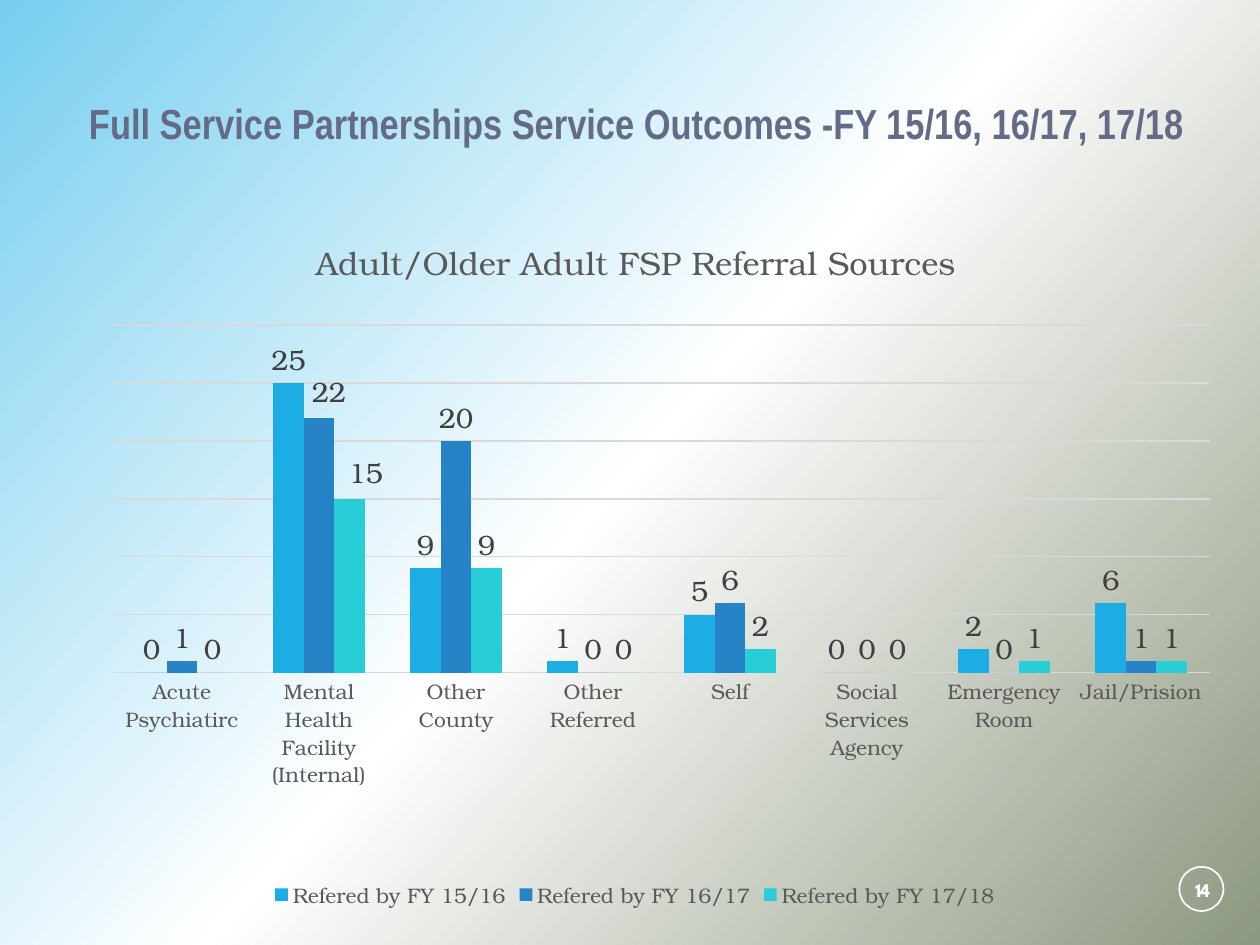
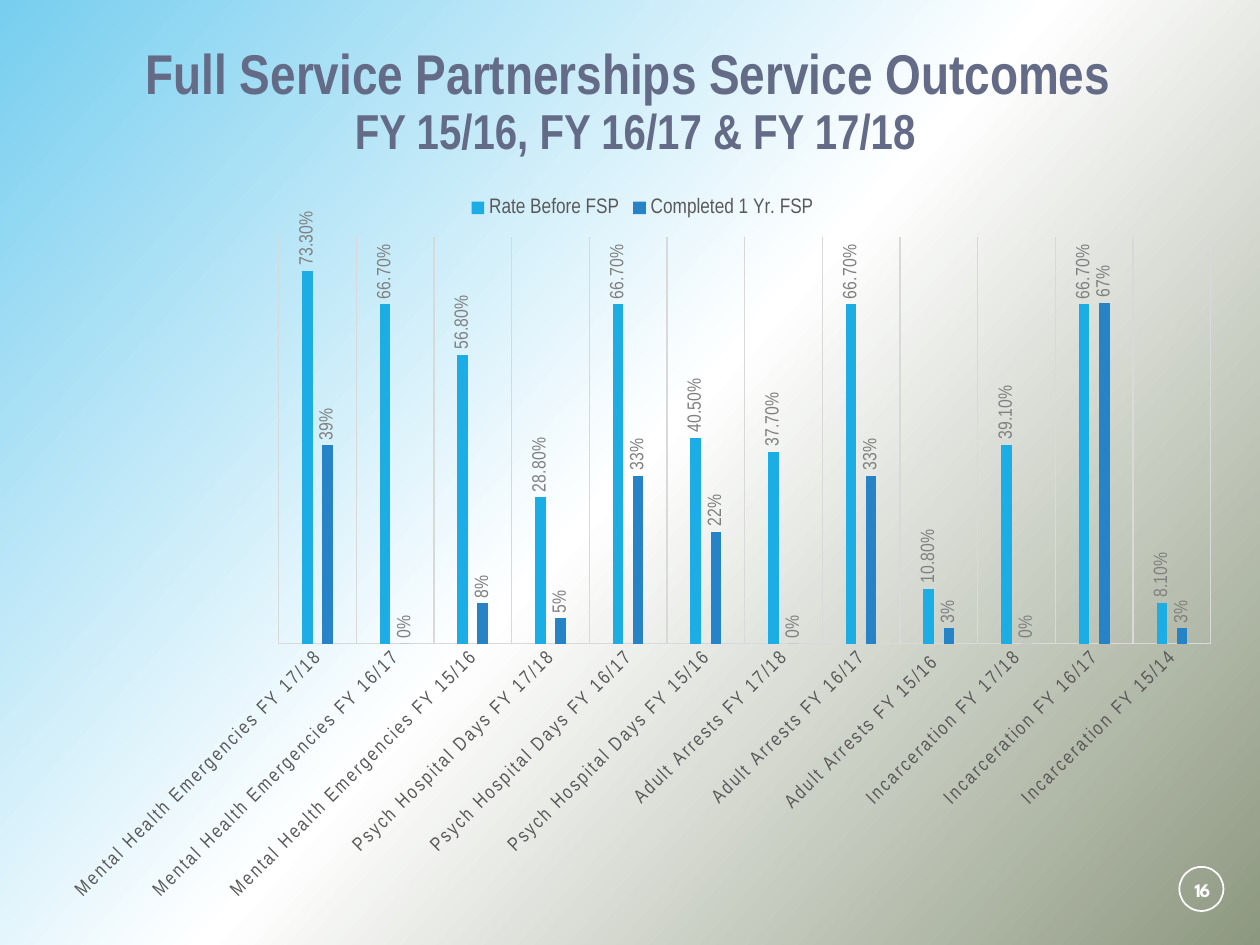
"""Build two slides on Full Service Partnerships outcomes."""
from copy import deepcopy
from dataclasses import dataclass

from lxml import etree
from pptx import Presentation
from pptx.chart.data import CategoryChartData
from pptx.dml.color import RGBColor
from pptx.enum.chart import XL_CHART_TYPE, XL_LABEL_POSITION, XL_LEGEND_POSITION, XL_TICK_LABEL_POSITION, XL_TICK_MARK
from pptx.enum.shapes import MSO_SHAPE
from pptx.enum.text import MSO_ANCHOR, PP_ALIGN
from pptx.oxml.ns import qn
from pptx.util import Inches, Pt

COLUMNS = XL_CHART_TYPE.COLUMN_CLUSTERED
OUTSIDE_END = XL_LABEL_POSITION.OUTSIDE_END
LEGEND_TOP, LEGEND_BOTTOM = XL_LEGEND_POSITION.TOP, XL_LEGEND_POSITION.BOTTOM
NO_LABELS = XL_TICK_LABEL_POSITION.NONE
NO_TICKS = XL_TICK_MARK.NONE
OVAL = MSO_SHAPE.OVAL
MIDDLE = MSO_ANCHOR.MIDDLE
CENTER = PP_ALIGN.CENTER


@dataclass(frozen=True)
class Theme:
    """Colours, fonts and type sizes shared by the slides."""

    background: tuple = ((0, "77CEEF"), (0.5, "FFFFFF"), (1, "8D9880"))
    background_angle: int = 318
    series: tuple = ("1CADE4", "2683C6", "27CED7")
    heading: str = "646B86"
    white: str = "FFFFFF"
    axis: str = "595959"
    dark_label: str = "404040"
    light_label: str = "808080"
    grid: str = "D9D9D9"
    narrow: str = "Arial Narrow"
    serif: str = "TeX Gyre Bonum"
    number_font: str = "League Spartan"
    number_size: float = 11
    small: float = 11
    legend: float = 12
    label: float = 16
    chart_title: float = 18.6
    title: float = 24
    subtitle: float = 28
    large_title: float = 32


THEME = Theme()
NUMBER_BOX = (9.28, 6.86, 0.53, 0.4)
RING_OFFSET = (0.08, 0.02)
RING_SIDE = 0.35

REFERRAL_SOURCES = (
    "Acute Psychiatirc", "Mental Health Facility (Internal)", "Other County", "Other Referred",
    "Self", "Social Services Agency", "Emergency Room", "Jail/Prision",
)
REFERRALS = {
    "Refered by FY 15/16": (0, 25, 9, 1, 5, 0, 2, 6),
    "Refered by FY 16/17": (1, 22, 20, 0, 6, 0, 0, 1),
    "Refered by FY 17/18": (0, 15, 9, 0, 2, 0, 1, 1),
}
LABEL_SHIFTS = {1: (0.08, -0.02), 2: (0.13, -0.02)}
OUTCOMES = (
    "Mental Health Emergencies FY 17/18", "Mental Health Emergencies FY 16/17",
    "Mental Health Emergencies FY 15/16", "Psych Hospital Days FY 17/18",
    "Psych Hospital Days FY 16/17", "Psych Hospital Days FY 15/16",
    "Adult Arrests FY 17/18", "Adult Arrests FY 16/17", "Adult Arrests FY 15/16 ",
    "Incarceration FY 17/18", "Incarceration FY 16/17", "Incarceration FY 15/14",
)
RATES = {
    "Rate Before FSP": (0.733, 0.667, 0.568, 0.288, 0.667, 0.405,
                        0.377, 0.667, 0.108, 0.391, 0.667, 0.081),
    "Completed 1 Yr. FSP": (0.39, 0, 0.08, 0.05, 0.33, 0.22, 0, 0.33, 0.03, 0, 0.67, 0.03),
}
RATE_FORMATS = ("0.00%", "0%")


def rgb(code):
    """Return the colour for a hexadecimal code."""
    return RGBColor.from_string(code)


def set_font(font, name, size, color, bold=False):
    """Apply one type style to a font."""
    font.name, font.size, font.bold = name, Pt(size), bold
    font.color.rgb = rgb(color)


def add_text(page, box, lines, font=THEME.narrow, color=THEME.heading, line_spacing=None, tracking=None):
    """Add a centred bold text box whose lines are text and size pairs."""
    frame = page.shapes.add_textbox(*map(Inches, box)).text_frame
    frame.word_wrap = True
    frame.vertical_anchor = MIDDLE
    para = frame.paragraphs[0]
    para.alignment = CENTER
    para.line_spacing = line_spacing
    for index, (text, size) in enumerate(lines):
        if index:
            para.add_line_break()
        span = para.add_run()
        span.text = text
        set_font(span.font, font, size, color, bold=True)
        if tracking is not None:
            span.font._element.set("spc", str(round(tracking * 100)))


def paint_background(page):
    """Fill the page with the diagonal gradient."""
    fill = page.background.fill
    fill.gradient()
    fill.gradient_angle = THEME.background_angle
    stops = page._element.find(".//" + qn("a:gsLst"))
    stops.insert(1, deepcopy(stops[0]))
    for stop, (position, color) in zip(fill.gradient_stops, THEME.background):
        stop.position = position
        stop.color.rgb = rgb(color)


def add_page_number(page, box, number):
    """Draw the ringed page number in its box."""
    corner = [start + offset for start, offset in zip(box, RING_OFFSET)]
    ring = page.shapes.add_shape(OVAL, *map(Inches, (*corner, RING_SIDE, RING_SIDE)))
    ring.shadow.inherit = False
    ring.fill.background()
    ring.line.color.rgb = rgb(THEME.white)
    ring.line.width = Pt(1)
    add_text(page, box, [(str(number), THEME.number_size)], font=THEME.number_font,
             color=THEME.white, tracking=-0.7)


def add_page(deck, number, title_box, title_lines):
    """Add a page with its background, title and number."""
    page = deck.slides.add_slide(deck.slide_layouts[6])
    paint_background(page)
    add_text(page, title_box, title_lines, line_spacing=0.9)
    add_page_number(page, NUMBER_BOX, number)
    return page


def set_layout(parent, index, box, modes=None, **lengths):
    """Lay out a chart part by lengths in inches within the chart box."""
    old = parent.find(qn("c:layout"))
    if old is not None:
        parent.remove(old)
    layout = etree.Element(qn("c:layout"))
    parent.insert(index, layout)
    manual = etree.SubElement(layout, qn("c:manualLayout"))
    _, _, width, height = box
    wholes = {"x": width, "y": height, "w": width, "h": height}
    values = {name: length / wholes[name] for name, length in lengths.items()}
    for name, value in {**(modes or {}), **values}.items():
        etree.SubElement(manual, qn("c:" + name)).set("val", str(value))


def place_plot(chart, box, left, top, width, height):
    """Fix the inner plot area within the chart box."""
    modes = {"layoutTarget": "inner", "xMode": "edge", "yMode": "edge"}
    set_layout(chart._chartSpace.chart.plotArea, 0, box, modes, x=left, y=top, w=width, h=height)


def rotate_text(part, degrees):
    """Turn the text of a chart part."""
    body = part._element.find(qn("c:txPr")).find(qn("a:bodyPr"))
    body.set("rot", str(degrees * 60000))
    body.set("vert", "horz")


def style_line(line, color):
    """Give a line the thin chart stroke."""
    line.color.rgb = rgb(color)
    line.width = Pt(0.75)


def add_column_chart(page, box, categories, series, font, legend_position, axis_size, gap, maximum, overlap=0):
    """Add a clustered column chart with the shared styling."""
    data = CategoryChartData()
    data.categories = categories
    for name, values in series.items():
        data.add_series(name, values)
    chart = page.shapes.add_chart(COLUMNS, *map(Inches, box), data).chart
    chart.font.name, chart.font.size = font, Pt(axis_size)
    chart.has_title = False
    chart.has_legend = True
    chart.legend.position = legend_position
    chart.legend.include_in_layout = False
    set_font(chart.legend.font, font, THEME.legend, THEME.axis)
    plot = chart.plots[0]
    plot.gap_width, plot.overlap, plot.vary_by_categories = gap, overlap, False
    for columns, color in zip(plot.series, THEME.series):
        columns.format.fill.solid()
        columns.format.fill.fore_color.rgb = rgb(color)
        columns.invert_if_negative = False
    for axis in (chart.category_axis, chart.value_axis):
        axis.major_tick_mark = axis.minor_tick_mark = NO_TICKS
        set_font(axis.tick_labels.font, font, axis_size, THEME.axis)
    chart.value_axis.minimum_scale, chart.value_axis.maximum_scale = 0, maximum
    return chart


def style_labels(labels, font, size, color):
    """Place value labels above the columns."""
    labels.position = OUTSIDE_END
    set_font(labels.font, font, size, color)


def add_referral_chart(page, box):
    """Chart the referral sources by fiscal year."""
    font = THEME.serif
    chart = add_column_chart(page, box, REFERRAL_SOURCES, REFERRALS, font, LEGEND_BOTTOM,
                             axis_size=THEME.legend, gap=150, maximum=30)
    place_plot(chart, box, 0.57, 0.91, 8.7, 2.76)
    chart.has_title = True
    span = chart.chart_title.text_frame.paragraphs[0].add_run()
    span.text = "Adult/Older Adult FSP Referral Sources"
    set_font(span.font, font, THEME.chart_title, THEME.axis)
    set_layout(chart.chart_title._element, 1, box, {"xMode": "edge", "yMode": "edge"}, x=2.13, y=0.16)
    chart.category_axis.format.line.fill.background()
    axis = chart.value_axis
    axis.format.line.fill.background()
    axis.tick_label_position = NO_LABELS
    axis.major_unit = 5
    style_line(axis.major_gridlines.format.line, THEME.grid)
    for index, series in enumerate(chart.plots[0].series):
        labels = series.data_labels
        labels.show_value = True
        style_labels(labels, font, THEME.label, THEME.dark_label)
        if index in LABEL_SHIFTS:
            style_labels(series.points[1].data_label, font, THEME.label, THEME.dark_label)
            across, down = LABEL_SHIFTS[index]
            set_layout(labels._element.find(qn("c:dLbl")), 1, box, x=across, y=down)


def add_rate_chart(page, box):
    """Chart the outcome rates before and after one year."""
    font = THEME.narrow
    chart = add_column_chart(page, box, OUTCOMES, RATES, font, LEGEND_TOP,
                             axis_size=THEME.small, gap=444, maximum=0.8, overlap=-90)
    place_plot(chart, box, 1.82, 0.42, 7.4, 3.23)
    chart.value_axis.has_major_gridlines = False
    chart.value_axis.visible = False
    axis = chart.category_axis
    style_line(axis.format.line, THEME.grid)
    axis.has_major_gridlines = True
    style_line(axis.major_gridlines.format.line, THEME.grid)
    rotate_text(axis, -45)
    axis.tick_labels.font._element.set("spc", "120")
    for series, number_format in zip(chart.plots[0].series, RATE_FORMATS):
        labels = series.data_labels
        labels.show_value = True
        style_labels(labels, font, THEME.small, THEME.light_label)
        labels.number_format = number_format
        labels.number_format_is_linked = False
        rotate_text(labels, -90)


def build_referral_page(deck):
    """Build the page on referral sources."""
    page = add_page(deck, 14, (0.55, 0.75, 9, 0.5), [
        ("Full Service Partnerships Service Outcomes -FY 15/16, 16/17, 17/18", THEME.title)])
    add_referral_chart(page, (0.33, 1.67, 9.42, 5.58))


def build_rate_page(deck):
    """Build the page on outcome rates."""
    page = add_page(deck, 16, (0.54, 0.33, 9, 0.98), [
        ("Full Service Partnerships Service Outcomes ", THEME.large_title),
        ("FY 15/16, FY 16/17 & FY 17/18", THEME.subtitle)])
    add_rate_chart(page, (0.39, 1.46, 9.42, 5.8))


def main():
    """Build and save the deck."""
    deck = Presentation()
    deck.slide_width, deck.slide_height = Inches(10), Inches(7.5)
    build_referral_page(deck)
    build_rate_page(deck)
    deck.save("out.pptx")


if __name__ == "__main__":
    main()
